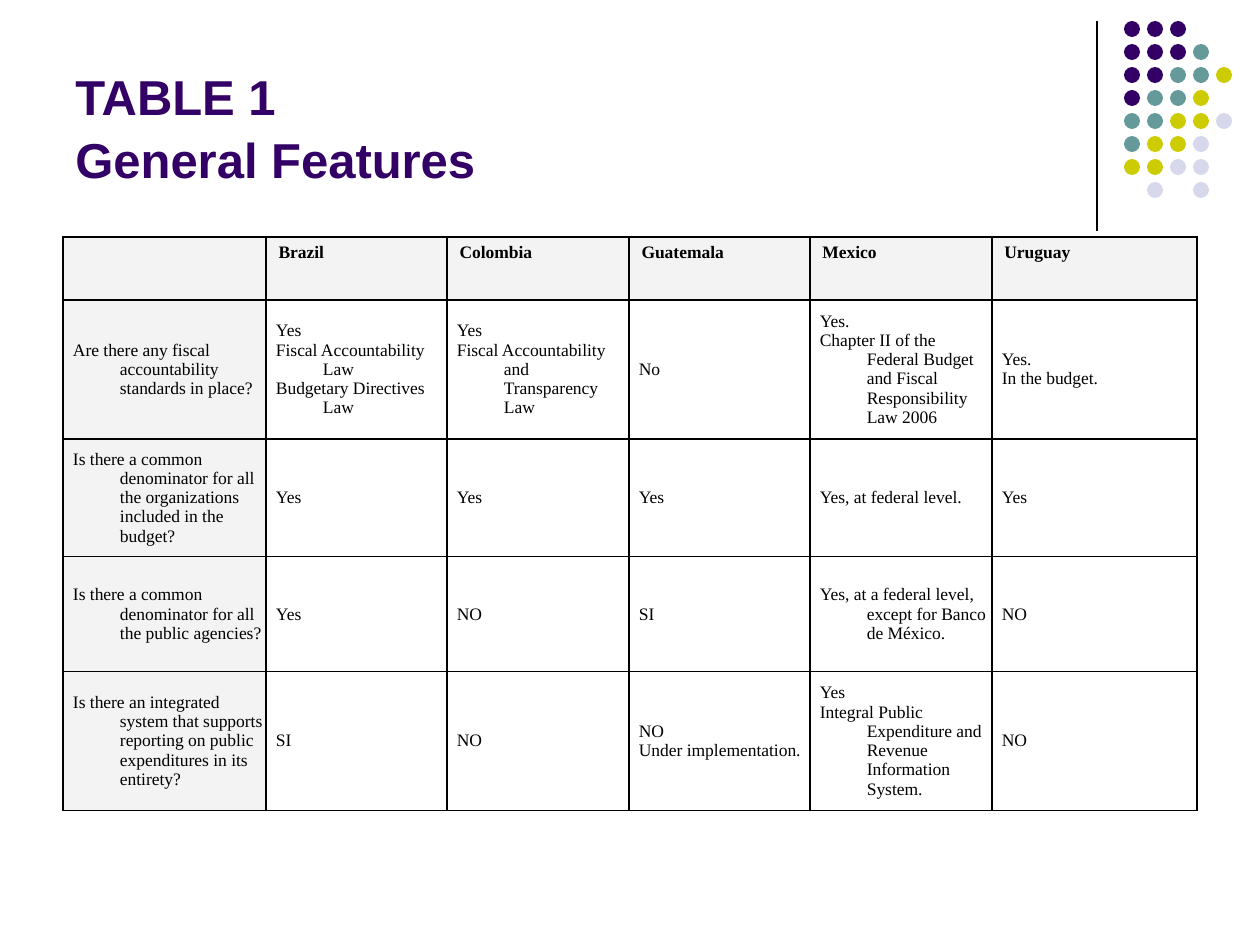
import dataclasses
import typing

import lxml.etree
import pptx
import pptx.dml.color
import pptx.enum.shapes
import pptx.enum.text
import pptx.oxml
import pptx.oxml.ns
import pptx.util

RGBColor = pptx.dml.color.RGBColor
Anchor = pptx.enum.text.MSO_ANCHOR

PURPLE = RGBColor(0x33, 0x00, 0x66)
TEAL = RGBColor(0x66, 0x99, 0x99)
OLIVE = RGBColor(0xCC, 0xCC, 0x00)
LAVENDER = RGBColor(0xD8, 0xD8, 0xEC)
BLACK = RGBColor(0x00, 0x00, 0x00)
GREY = RGBColor(0xF3, 0xF3, 0xF3)

PX_PER_INCH = 126
HANGING_INDENT = 47

DOT_COLORS = {"P": PURPLE, "T": TEAL, "O": OLIVE, "L": LAVENDER}
DOT_ROWS = ["PPP", "PPPT", "PPTTO", "PTTO", "TTOOL", "TOOL", "OOLL", " L L"]
DOT_LEFT, DOT_TOP, DOT_PITCH, DOT_SIZE = 1124, 21, 23, 16


@dataclasses.dataclass(frozen=True)
class Row:
    height: int
    cells: tuple[str, ...]


COLUMN_WIDTHS = (203, 181, 182, 181, 182, 205)
ROWS = (
    Row(63, ("", "Brazil", "Colombia", "Guatemala", "Mexico", "Uruguay")),
    Row(129, (
        "Are there any fiscal accountability standards in place?",
        "Yes\nFiscal Accountability Law\nBudgetary Directives Law",
        "Yes\nFiscal Accountability and Transparency Law",
        "No",
        "Yes.\nChapter II of the Federal Budget and Fiscal Responsibility Law 2006",
        "Yes.\nIn the budget.",
    )),
    Row(110, (
        "Is there a common denominator for all the organizations included in the budget?",
        "Yes", "Yes", "Yes", "Yes, at federal level.", "Yes",
    )),
    Row(115, (
        "Is there a common denominator for all the public agencies?",
        "Yes", "NO", "SI",
        "Yes, at a federal level, except for Banco de México.",
        "NO",
    )),
    Row(135, (
        "Is there an integrated system that supports reporting on public "
        "expenditures in its entirety?",
        "SI", "NO", "NO\nUnder implementation.",
        "Yes\nIntegral Public Expenditure and Revenue Information System.",
        "NO",
    )),
)


def px(length: int) -> pptx.util.Emu:
    return pptx.util.Emu(round(length * 914400 / PX_PER_INCH))


def write_text(frame: typing.Any, text: str, *, font: str, size: int, color: RGBColor,
               bold: bool = False, hanging: int = 0,
               line_spacing: float | None = None) -> None:
    """Fill a text frame; a newline starts a paragraph, a vertical tab a line."""
    frame.text = text
    frame.word_wrap = True
    for paragraph in frame.paragraphs:
        paragraph.line_spacing = line_spacing
        paragraph.font.size = pptx.util.Pt(size)
        if hanging:
            properties = paragraph._p.get_or_add_pPr()
            properties.set("marL", str(px(hanging)))
            properties.set("indent", str(-px(hanging)))
        for run in paragraph.runs:
            run.font.name = font
            run.font.size = pptx.util.Pt(size)
            run.font.bold = bold
            run.font.color.rgb = color


def add_divider(slide: typing.Any) -> None:
    line = slide.shapes.add_connector(
        pptx.enum.shapes.MSO_CONNECTOR.STRAIGHT, px(1097), px(21), px(1097), px(231))
    line.line.color.rgb = BLACK
    line.line.width = pptx.util.Pt(0.75)
    lxml.etree.SubElement(line._element.spPr, pptx.oxml.ns.qn("a:effectLst"))


def add_dots(slide: typing.Any) -> None:
    group = slide.shapes.add_group_shape()
    for row_index, row in enumerate(DOT_ROWS):
        for column_index, key in enumerate(row):
            if key not in DOT_COLORS:
                continue
            dot = group.shapes.add_shape(
                pptx.enum.shapes.MSO_SHAPE.OVAL,
                px(DOT_LEFT + column_index * DOT_PITCH),
                px(DOT_TOP + row_index * DOT_PITCH), px(DOT_SIZE), px(DOT_SIZE))
            dot.shadow.inherit = False
            dot.fill.solid()
            dot.fill.fore_color.rgb = DOT_COLORS[key]
            dot.line.fill.background()


def add_title(slide: typing.Any) -> None:
    box = slide.shapes.add_textbox(px(63), px(16), px(1040), px(179))
    box.text_frame.vertical_anchor = Anchor.BOTTOM
    write_text(box.text_frame, "TABLE 1\vGeneral Features", font="Arial", size=28,
               color=PURPLE, bold=True, line_spacing=1.08)


def set_borders(cell: typing.Any, color: RGBColor, width: float) -> None:
    properties = cell._tc.get_or_add_tcPr()
    for index, side in enumerate(("lnL", "lnR", "lnT", "lnB")):
        border = pptx.oxml.parse_xml(
            f'<a:{side} {pptx.oxml.ns.nsdecls("a")} w="{pptx.util.Pt(width)}">'
            f'<a:solidFill><a:srgbClr val="{color}"/></a:solidFill></a:{side}>')
        properties.insert(index, border)


def format_cell(cell: typing.Any, text: str, is_header: bool, is_question: bool) -> None:
    if is_header or is_question:
        cell.fill.solid()
        cell.fill.fore_color.rgb = GREY
    else:
        cell.fill.background()
    if not is_header:
        cell.vertical_anchor = Anchor.MIDDLE
        cell.margin_left, cell.margin_right = px(10), px(2)
    write_text(cell.text_frame, text, font="Times New Roman", size=10, color=BLACK,
               bold=is_header, hanging=HANGING_INDENT)
    set_borders(cell, BLACK, 1)


def add_features_table(slide: typing.Any) -> None:
    table = slide.shapes.add_table(
        len(ROWS), len(COLUMN_WIDTHS), px(63), px(237),
        px(sum(COLUMN_WIDTHS)), px(sum(row.height for row in ROWS))).table
    table.horz_banding = False
    for column, width in zip(table.columns, COLUMN_WIDTHS):
        column.width = px(width)
    for row_index, row in enumerate(ROWS):
        table.rows[row_index].height = px(row.height)
        for column_index, text in enumerate(row.cells):
            format_cell(table.cell(row_index, column_index), text,
                        is_header=row_index == 0, is_question=column_index == 0)


def main() -> None:
    presentation = pptx.Presentation()
    presentation.slide_width, presentation.slide_height = px(1260), px(945)
    slide = presentation.slides.add_slide(presentation.slide_layouts[6])
    add_divider(slide)
    add_dots(slide)
    add_title(slide)
    add_features_table(slide)
    presentation.save("out.pptx")


if __name__ == "__main__":
    main()
